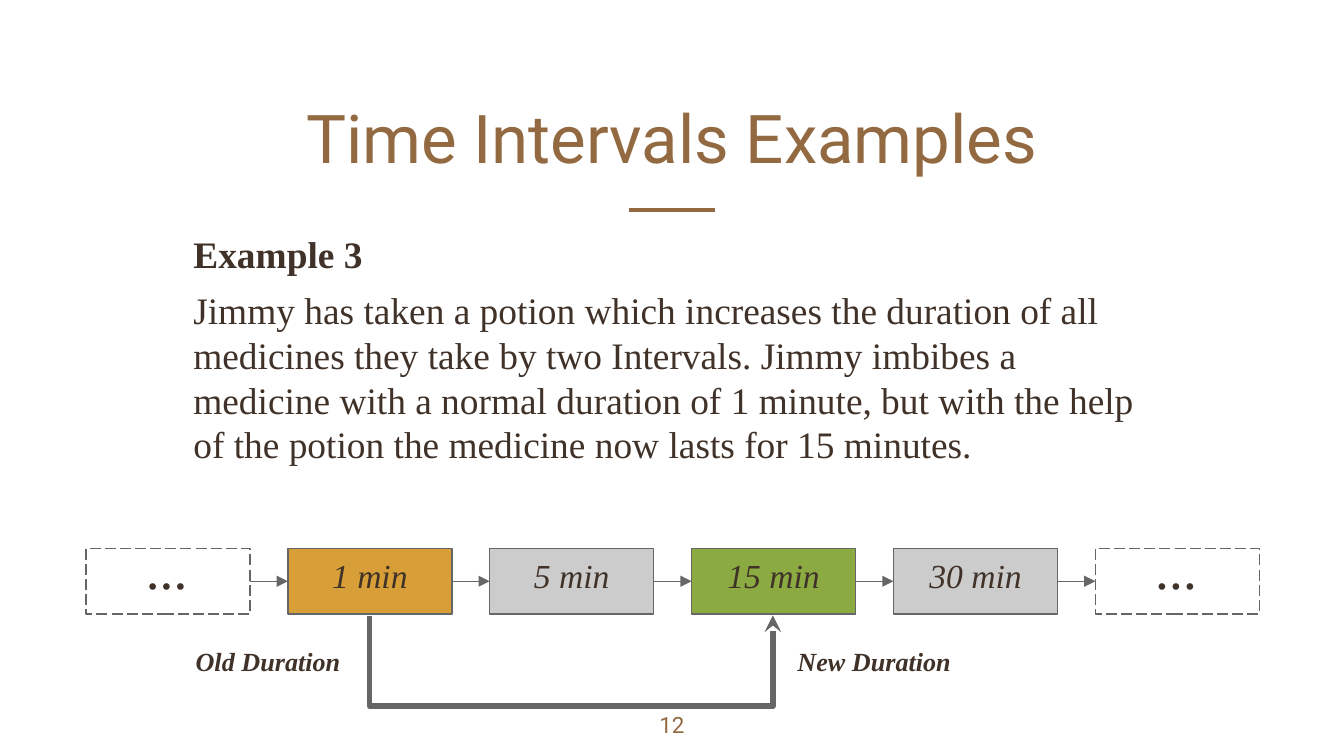
import pptx
import pptx.dml.color
import pptx.enum.dml
import pptx.enum.shapes
import pptx.enum.text
import pptx.oxml.ns
import pptx.util
from lxml import etree

Inches, Pt = pptx.util.Inches, pptx.util.Pt
RGBColor = pptx.dml.color.RGBColor
qn = pptx.oxml.ns.qn
ANCHOR = pptx.enum.text.MSO_ANCHOR
ALIGN = pptx.enum.text.PP_ALIGN
CONNECTOR = pptx.enum.shapes.MSO_CONNECTOR

BROWN = RGBColor(0x92, 0x69, 0x40)
INK = RGBColor(0x40, 0x32, 0x28)
GRAY = RGBColor(0x66, 0x66, 0x66)
SILVER = RGBColor(0xCC, 0xCC, 0xCC)
AMBER = RGBColor(0xD8, 0x9F, 0x39)
GREEN = RGBColor(0x8B, 0xAB, 0x42)
SERIF = "Times New Roman"


def write(shape, text, size, font=SERIF, color=INK, bold=False, italic=False,
          align=ALIGN.CENTER, anchor=ANCHOR.TOP, inset=0.1):
    frame = shape.text_frame
    frame.word_wrap = True
    frame.vertical_anchor = anchor
    frame.margin_left = frame.margin_right = frame.margin_top = Inches(inset)
    frame.margin_bottom = Inches(0.1)
    frame.text = text
    for paragraph in frame.paragraphs:
        paragraph.alignment = align
        for run in paragraph.runs:
            run.font.name = font
            run.font.size = Pt(size)
            run.font.color.rgb = color
            run.font.bold = bold
            run.font.italic = italic


def style_line(connector, color, width, arrow_end=None, arrow="triangle"):
    connector.line.color.rgb = color
    connector.line.width = Pt(width)
    if arrow_end:
        etree.SubElement(connector.line._get_or_add_ln(), qn(arrow_end), type=arrow)
    etree.SubElement(connector._element.spPr, qn("a:effectLst"))


# Slide in 16:9
deck = pptx.Presentation()
deck.slide_width = Inches(10)
deck.slide_height = deck.slide_width * 9 // 16
slide = deck.slides.add_slide(deck.slide_layouts[6])
shapes = slide.shapes

# Title with its short rule, and the page number
rule = shapes.add_connector(CONNECTOR.STRAIGHT, Inches(4.68), Inches(1.56),
                            Inches(5.32), Inches(1.56))
style_line(rule, BROWN, 2.25)
title = shapes.add_textbox(Inches(1.03), Inches(0.48), Inches(7.94), Inches(0.94))
write(title, "Time Intervals Examples", 36, "Roboto", BROWN, anchor=ANCHOR.BOTTOM)
page_number = shapes.add_textbox(Inches(4.7), Inches(5.19), Inches(0.6), Inches(0.43))
write(page_number, "12", 12, "Roboto", BROWN)

# Example text
example = shapes.add_textbox(Inches(1.34), Inches(1.62), Inches(7.32), Inches(3.77))
write(example,
      "Example 3\n"
      "Jimmy has taken a potion which increases the duration of all medicines "
      "they take by two Intervals. Jimmy imbibes a medicine with a normal "
      "duration of 1 minute, but with the help of the potion the medicine now "
      "lasts for 15 minutes.",
      20, align=ALIGN.LEFT)
heading, story = example.text_frame.paragraphs
heading.runs[0].font.bold = True
story.space_before = Pt(6)

# Chain of intervals; the open ends have no fill
intervals = [("...", None), ("1 min", AMBER), ("5 min", SILVER),
             ("15 min", GREEN), ("30 min", SILVER), ("...", None)]
pitch = (8.15 - 0.64) / (len(intervals) - 1)
chain = []
for index, (label, fill) in enumerate(intervals):
    interval = shapes.add_shape(pptx.enum.shapes.MSO_SHAPE.RECTANGLE,
                                Inches(0.64 + pitch * index), Inches(4.08),
                                Inches(1.22), Inches(0.49))
    interval.shadow.inherit = False
    interval.line.color.rgb = GRAY
    interval.line.width = Pt(0.75)
    if fill:
        interval.fill.solid()
        interval.fill.fore_color.rgb = fill
        write(interval, label, 18, italic=True, anchor=ANCHOR.MIDDLE, inset=0)
    else:
        interval.fill.background()
        interval.line.dash_style = pptx.enum.dml.MSO_LINE.LONG_DASH
        write(interval, label, 30, italic=True, anchor=ANCHOR.BOTTOM, inset=0)
    chain.append(interval)

for before, after in zip(chain, chain[1:]):
    step = shapes.add_connector(CONNECTOR.STRAIGHT, 0, 0, 0, 0)
    step.begin_connect(before, 3)
    step.end_connect(after, 1)
    style_line(step, GRAY, 0.75, "a:tailEnd")

# Jump from old to new duration: an almost flat elbow turned a quarter,
# whose bulge is a multiple of its tiny width
jump = shapes.add_connector(CONNECTOR.ELBOW, Inches(4.25), Inches(3.08),
                            Inches(4.25) + 600, Inches(6.08))
jump._element.spPr.find(qn("a:xfrm")).set("rot", str(90 * 60000))
adjustments = jump._element.spPr.find(qn("a:prstGeom")).get_or_add_avLst()
etree.SubElement(adjustments, qn("a:gd"), name="adj1", fmla="val 85887500")
style_line(jump, GRAY, 3, "a:headEnd", "stealth")

# Captions beside the jump
for caption, left in (("New Duration", 5.72), ("Old Duration", 1.21)):
    note = shapes.add_textbox(Inches(left), Inches(4.7), Inches(1.57), Inches(0.49))
    write(note, caption, 14, bold=True, italic=True)

deck.save("out.pptx")
